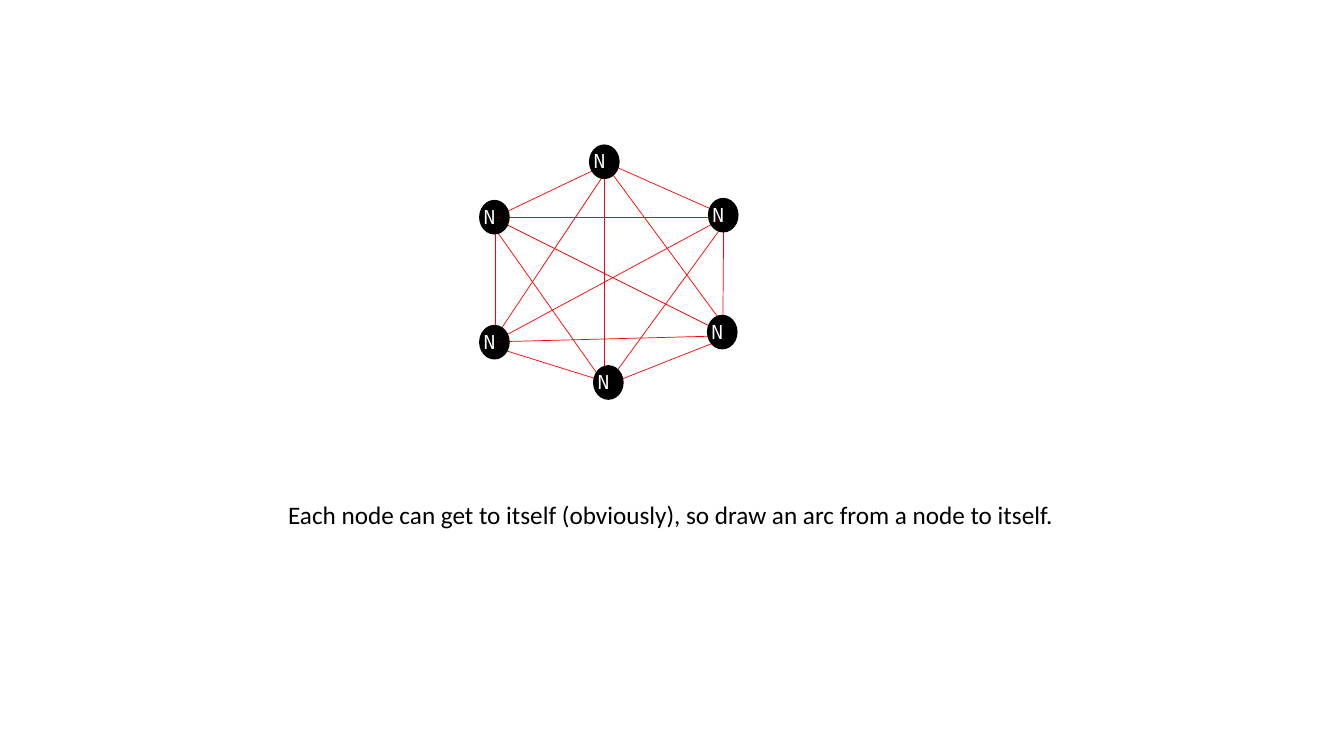
import pptx
import pptx.dml.color
import pptx.enum.shapes
import pptx.enum.text
import pptx.oxml.ns
import pptx.util
import lxml.etree

Inches = pptx.util.Inches
INK, PAPER, ARC = "000000", "FFFFFF", "FF0000"

ARCS = [
    (5.93, 1.53, 7.17, 3.21),
    (6.02, 1.69, 4.86, 3.43),
    (7.17, 2.24, 6.01, 3.83),
    (5.99, 3.8, 4.94, 2.31),
    (6, 3.63, 6, 1.77),
    (6.07, 3.8, 7.16, 3.37),
    (7.18, 2.13, 7.17, 3.46),
    (4.99, 2.21, 7.25, 3.34),
    (4.99, 2.16, 7.09, 2.16),
    (5.95, 1.66, 4.88, 2.17),
    (5.03, 3.32, 7.09, 2.21),
    (6.03, 1.62, 7.18, 2.13),
    (4.99, 3.47, 5.92, 3.76),
    (4.97, 3.39, 7.26, 3.33),
]
LEFT_ARC = (4.91, 2.32, 4.91, 3.22)
NODES = [(5.85, 1.44), (4.76, 1.99), (7.03, 1.97), (4.76, 3.23), (7.02, 3.13), (5.89, 3.63)]


def color(value):
    return pptx.dml.color.RGBColor.from_string(value)


class Diagram:
    label = {"name": "Noto Sans Mono", "size": pptx.util.Pt(14)}
    caption = {"name": "Calibri", "size": pptx.util.Pt(18)}

    def __init__(self, page):
        self.page = page

    def arc(self, x1, y1, x2, y2):
        line = self.page.shapes.add_connector(
            pptx.enum.shapes.MSO_CONNECTOR.STRAIGHT,
            Inches(x1), Inches(y1), Inches(x2), Inches(y2))
        line.line.color.rgb = color(ARC)
        line.line.width = pptx.util.Pt(0.5)
        element = line._element
        lxml.etree.SubElement(element.spPr, pptx.oxml.ns.qn("a:effectLst"))
        element.remove(element.find(pptx.oxml.ns.qn("p:style")))

    def text(self, left, top, width, height, words, style, shade, wrap):
        box = self.page.shapes.add_textbox(
            Inches(left), Inches(top), Inches(width), Inches(height))
        frame = box.text_frame
        frame.word_wrap = wrap
        frame.auto_size = pptx.enum.text.MSO_AUTO_SIZE.SHAPE_TO_FIT_TEXT
        span = frame.paragraphs[0].add_run()
        span.text = words
        for key, value in style.items():
            setattr(span.font, key, value)
        span.font.color.rgb = color(shade)

    def node(self, left, top):
        disc = self.page.shapes.add_shape(
            pptx.enum.shapes.MSO_SHAPE.OVAL,
            Inches(left), Inches(top), Inches(0.29), Inches(0.33))
        disc.shadow.inherit = False
        disc.fill.solid()
        disc.fill.fore_color.rgb = color(INK)
        disc.line.color.rgb = color(INK)
        disc.line.width = pptx.util.Pt(1)
        self.text(left - 0.06, top - 0.01, 0.42, 0.34, "N", self.label, PAPER, True)


def main():
    deck = pptx.Presentation()
    deck.slide_width = Inches(40 / 3)
    deck.slide_height = Inches(7.5)
    diagram = Diagram(deck.slides.add_slide(deck.slide_layouts.get_by_name("Blank")))
    for ends in ARCS:
        diagram.arc(*ends)
    for corner in NODES:
        diagram.node(*corner)
    diagram.arc(*LEFT_ARC)
    diagram.text(
        2.76, 4.9, 7.84, 0.4,
        "Each node can get to itself (obviously), so draw an arc from a node to itself.",
        diagram.caption, INK, False)
    deck.save("out.pptx")


if __name__ == "__main__":
    main()
